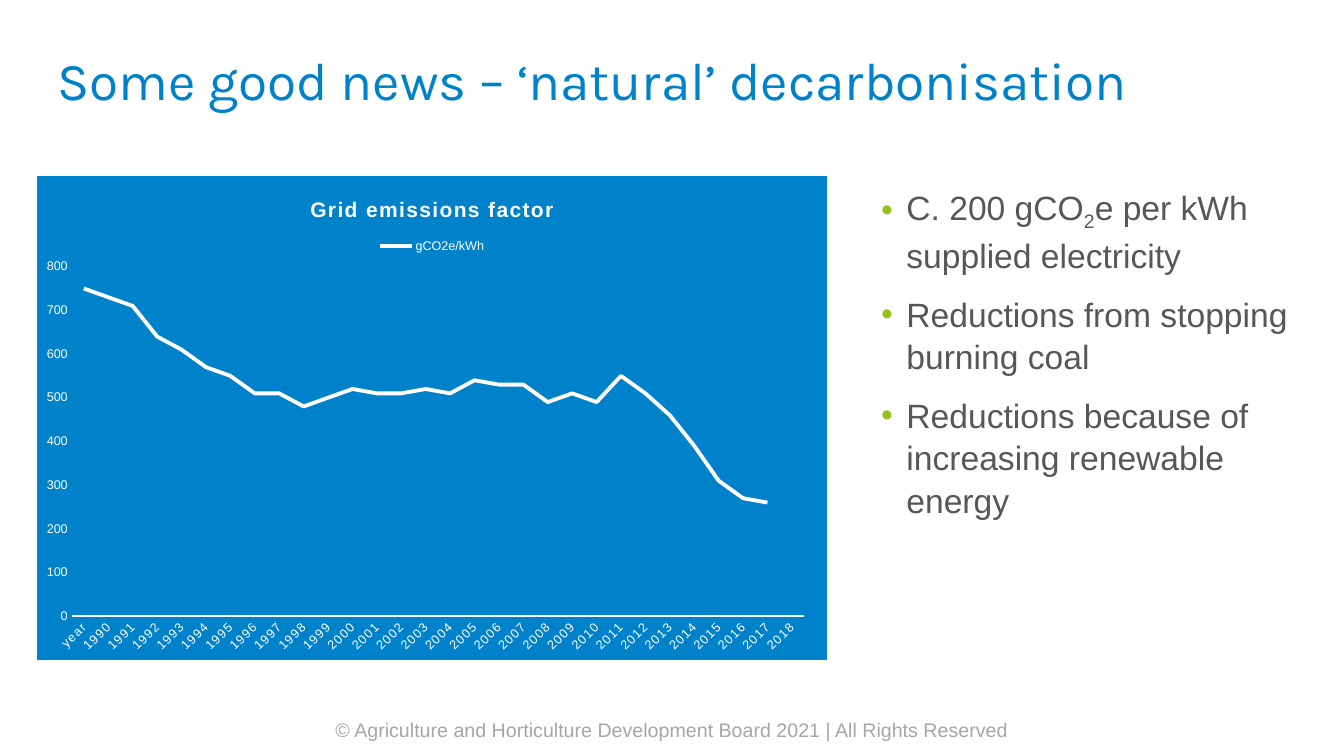
from lxml.etree import SubElement
from pptx import Presentation
from pptx.chart.data import CategoryChartData
from pptx.dml.color import RGBColor
from pptx.enum.chart import XL_CHART_TYPE, XL_LEGEND_POSITION, XL_TICK_MARK
from pptx.enum.text import MSO_ANCHOR, PP_ALIGN
from pptx.oxml import parse_xml
from pptx.oxml.ns import nsdecls, qn
from pptx.util import Inches, Pt

COLORS = {"blue": "0082CA", "green": "95C11F", "text": "575756",
          "footer": "A6A6A6", "white": "FFFFFF"}


def style_font(font, size, color, name="Arial", bold=False):
    font.size = Pt(size)
    font.name = name
    font.bold = bold
    font.color.rgb = RGBColor.from_string(COLORS[color])


def place(shape, left, top, width, height):
    shape.left, shape.top = Inches(left), Inches(top)
    shape.width, shape.height = Inches(width), Inches(height)


presentation = Presentation()
presentation.slide_width = Inches(13.33)
presentation.slide_height = Inches(7.5)
slide = presentation.slides.add_slide(presentation.slide_layouts[1])

title = slide.shapes.title
place(title, 0.47, 0.19, 12.44, 1.28)
title.text_frame.text = "Some good news – ‘natural’ decarbonisation"
title.text_frame.vertical_anchor = MSO_ANCHOR.MIDDLE
heading = title.text_frame.paragraphs[0]
heading.alignment = PP_ALIGN.LEFT
heading.line_spacing = 0.9
style_font(heading.runs[0].font, 38, "blue", "Karla")

body = slide.placeholders[1]
place(body, 8.64, 1.78, 4.25, 5.35)
bullets = [
    ["C. 200 gCO", "2", "e per kWh supplied electricity"],
    ["Reductions from stopping burning coal"],
    ["Reductions because of increasing renewable energy"],
]
for index, parts in enumerate(bullets):
    frame = body.text_frame
    paragraph = frame.add_paragraph() if index else frame.paragraphs[0]
    paragraph.space_before = Pt(12 if index else 0)
    paragraph.line_spacing = 1.05
    properties = paragraph._p.get_or_add_pPr()
    properties.set("marL", str(Inches(0.25)))
    properties.set("indent", str(-Inches(0.25)))
    bullet_color = SubElement(properties, qn("a:buClr"))
    SubElement(bullet_color, qn("a:srgbClr")).set("val", COLORS["green"])
    SubElement(properties, qn("a:buFont")).set("typeface", "Arial")
    SubElement(properties, qn("a:buChar")).set("char", "•")
    for part in parts:
        run = paragraph.add_run()
        run.text = part
        style_font(run.font, 24, "text")
        if part == "2":
            run.font._element.set("baseline", "-25000")

chart_data = CategoryChartData()
chart_data.categories = ["year"] + [str(year) for year in range(1990, 2019)]
chart_data.add_series("gCO2e/kWh", [
    750, 730, 710, 640, 610, 570, 550, 510, 510, 480,
    500, 520, 510, 510, 520, 510, 540, 530, 530, 490,
    510, 490, 550, 510, 460, 390, 310, 270, 260, None])
chart = slide.shapes.add_chart(
    XL_CHART_TYPE.LINE, Inches(0.37), Inches(1.75), Inches(7.83), Inches(4.8),
    chart_data).chart
style_font(chart.font, 10, "white")
chart._chartSpace.find(qn("c:chart")).addnext(parse_xml(
    f'<c:spPr {nsdecls("c", "a")}>'
    f'<a:solidFill><a:srgbClr val="{COLORS["blue"]}"/></a:solidFill>'
    f'<a:ln w="9525"><a:solidFill><a:srgbClr val="{COLORS["blue"]}"/>'
    '</a:solidFill></a:ln></c:spPr>'))

chart.has_title = True
chart.chart_title.include_in_layout = False
chart_heading = chart.chart_title.text_frame.paragraphs[0]
chart_heading.text = "Grid emissions factor"
chart_heading_font = chart_heading.runs[0].font
style_font(chart_heading_font, 15, "white", bold=True)
chart_heading_font._element.set("spc", "100")

chart.has_legend = True
chart.legend.position = XL_LEGEND_POSITION.TOP
chart.legend.include_in_layout = False
style_font(chart.legend.font, 9, "white")

for axis in (chart.category_axis, chart.value_axis):
    axis.major_tick_mark = axis.minor_tick_mark = XL_TICK_MARK.NONE
    axis.has_major_gridlines = False
    style_font(axis.tick_labels.font, 9, "white")

category_axis = chart.category_axis
category_axis.format.line.color.rgb = RGBColor.from_string(COLORS["white"])
category_axis.format.line.width = Pt(1)
category_axis.tick_labels.font._element.set("spc", "100")
category_text = category_axis._element.find(qn("c:txPr"))
category_text.find(qn("a:bodyPr")).set("rot", "-2700000")

value_axis = chart.value_axis
value_axis.minimum_scale, value_axis.maximum_scale = 0, 800
value_axis.major_unit = 100
value_axis.format.line.fill.background()

series = chart.plots[0].series[0]
series.smooth = False
series.format.line.color.rgb = RGBColor.from_string(COLORS["white"])
series.format.line.width = Pt(2.75)
chart.plots[0].vary_by_categories = False

plot_area = chart._chartSpace.find(qn("c:chart")).find(qn("c:plotArea"))
for existing in plot_area.findall(qn("c:layout")):
    plot_area.remove(existing)
layout = parse_xml(f'<c:layout {nsdecls("c")}><c:manualLayout/></c:layout>')
for tag, value in [("layoutTarget", "inner"), ("xMode", "edge"), ("yMode", "edge"),
                   ("x", 0.043), ("y", 0.186), ("w", 0.929), ("h", 0.724)]:
    SubElement(layout[0], qn(f"c:{tag}")).set("val", str(value))
plot_area.insert(0, layout)

footer = slide.shapes.add_textbox(0, Inches(7.07), presentation.slide_width, Inches(0.34))
footer.text_frame.word_wrap = True
footer.text_frame.text = (
    "© Agriculture and Horticulture Development Board 2021 | All Rights Reserved")
copyright_line = footer.text_frame.paragraphs[0]
copyright_line.alignment = PP_ALIGN.CENTER
style_font(copyright_line.runs[0].font, 14, "footer")

presentation.save("out.pptx")
